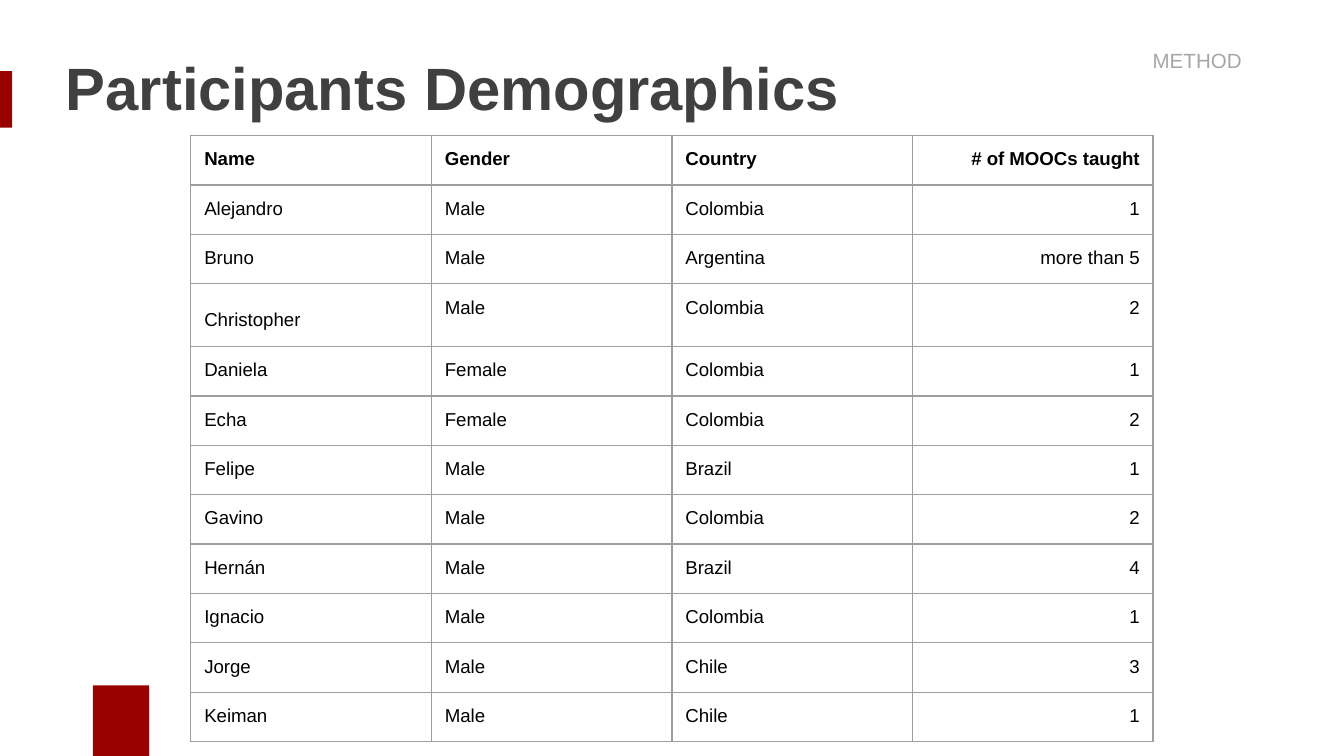
from pptx import Presentation
from pptx.dml.color import RGBColor
from pptx.enum import shapes, text
from pptx.oxml import parse_xml
from pptx.oxml.ns import nsdecls
from pptx.util import Inches, Pt

TITLE = "Participants Demographics"
SECTION = "METHOD"
HEAD = ("Name", "Gender", "Country", "# of MOOCs taught")
PEOPLE = [
    ("Alejandro", "Male", "Colombia", "1"),
    ("Bruno", "Male", "Argentina", "more than 5"),
    ("Christopher", "Male", "Colombia", "2"),
    ("Daniela", "Female", "Colombia", "1"),
    ("Echa", "Female", "Colombia", "2"),
    ("Felipe", "Male", "Brazil", "1"),
    ("Gavino", "Male", "Colombia", "2"),
    ("Hernán", "Male", "Brazil", "4"),
    ("Ignacio", "Male", "Colombia", "1"),
    ("Jorge", "Male", "Chile", "3"),
    ("Keiman", "Male", "Chile", "1"),
]
SPACED = "Christopher"
MARKS = [(0, 0.53, 0.09, 0.42), (0.69, 5.1, 0.42, 0.58)]
RED, GREY = "990000", "9E9E9E"
LEFT, RIGHT = text.PP_ALIGN.LEFT, text.PP_ALIGN.RIGHT


def paint(color, code):
    color.rgb = RGBColor.from_string(code)


def pad(item, size):
    item.margin_left = item.margin_right = Inches(size)
    item.margin_top = item.margin_bottom = Inches(size)


def write(frame, words, size, code, align=LEFT, bold=False):
    frame.text = words
    para = frame.paragraphs[0]
    para.alignment = align
    font = para.font
    font.name, font.size, font.bold = "Arial", Pt(size), bold
    paint(font.color, code)
    return para


def border(cell):
    """Draw a thin grey line on all four sides of a cell."""
    props = cell._tc.get_or_add_tcPr()
    for spot, side in enumerate(("lnL", "lnR", "lnT", "lnB")):
        props.insert(spot, parse_xml(
            f'<a:{side} {nsdecls("a")} w="{Pt(0.75)}"><a:solidFill>'
            f'<a:srgbClr val="{GREY}"/></a:solidFill></a:{side}>'))


deck = Presentation()
deck.slide_width = Inches(10)
deck.slide_height = deck.slide_width * 9 // 16
slide = deck.slides.add_slide(deck.slide_layouts[5])

for box in MARKS:
    mark = slide.shapes.add_shape(shapes.MSO_SHAPE.RECTANGLE, *map(Inches, box))
    mark.shadow.inherit = False
    mark.fill.solid()
    paint(mark.fill.fore_color, RED)
    mark.line.fill.background()

title = slide.shapes.title
title.left, title.top, title.width, title.height = map(
    Inches, (0.44, 0.22, 6.04, 0.85))
frame = title.text_frame
pad(frame, 0.05)
frame.word_wrap = True
frame.auto_size = text.MSO_AUTO_SIZE.NONE
frame.vertical_anchor = text.MSO_ANCHOR.MIDDLE
write(frame, TITLE, 32, "404041", bold=True)

label = slide.shapes.add_textbox(*map(Inches, (5.34, 0.31, 3.95, 0.26)))
frame = label.text_frame
pad(frame, 0.05)
frame.word_wrap = True
frame.auto_size = text.MSO_AUTO_SIZE.SHAPE_TO_FIT_TEXT
write(frame, SECTION, 11, "A6A6A6", RIGHT)

rows = [HEAD] + PEOPLE
table = slide.shapes.add_table(
    len(rows), len(HEAD), *map(Inches, (1.42, 1.01, 7.16, 4.39))).table
table.horz_banding = False
for r, row in enumerate(rows):
    for c, words in enumerate(row):
        cell = table.cell(r, c)
        pad(cell, 0.1)
        cell.fill.background()
        border(cell)
        align = RIGHT if c == len(HEAD) - 1 else LEFT
        para = write(cell.text_frame, words, 10, "000000", align, r == 0)
        if words == SPACED:
            para.line_spacing = 1.6

deck.save("out.pptx")
